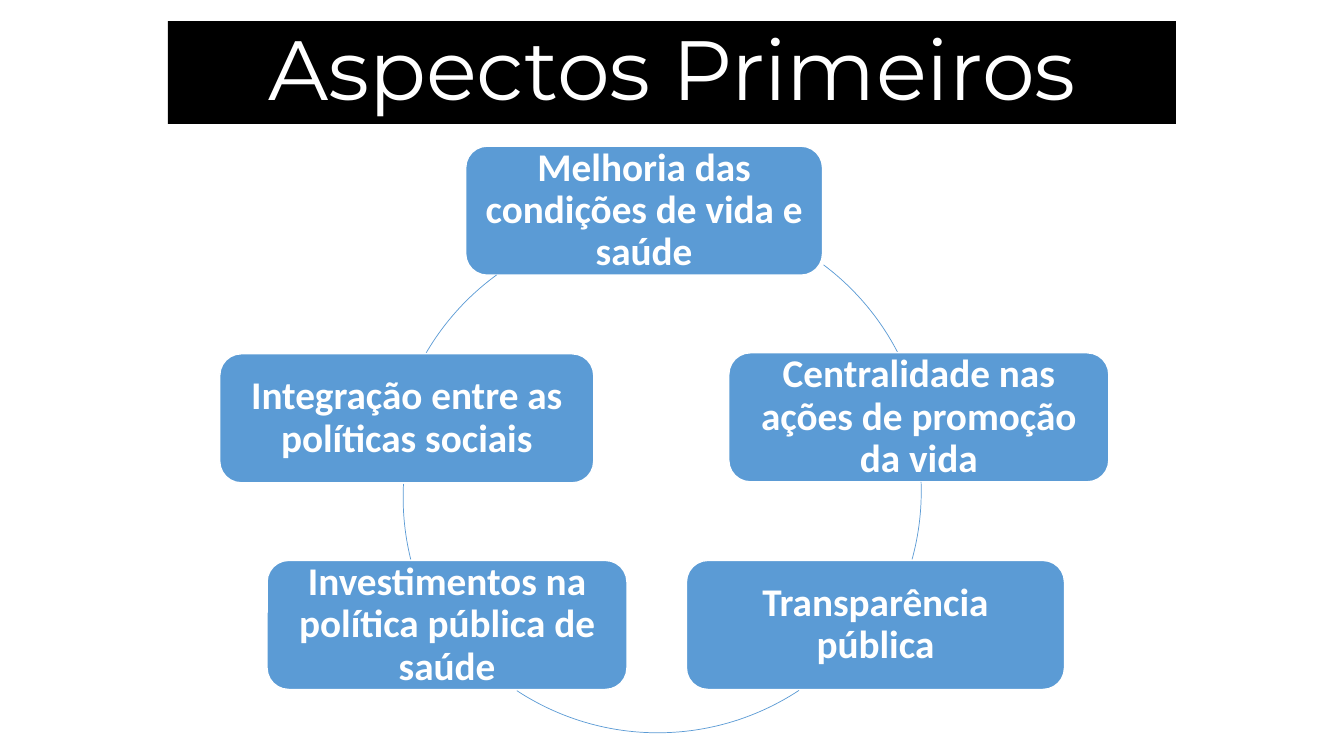
from pptx import Presentation
from pptx.dml.color import RGBColor
from pptx.enum.shapes import MSO_SHAPE
from pptx.enum.text import MSO_ANCHOR, PP_ALIGN
from pptx.util import Inches, Pt

BLACK = RGBColor(0x00, 0x00, 0x00)
WHITE = RGBColor(0xFF, 0xFF, 0xFF)
BLUE = RGBColor(0x5B, 0x9B, 0xD5)

COLS, ROWS = 80, 45
NODE_ROWS = 7.68
RING = 30.54
ANGLE_UNIT = 0.6

TITLE_FONT = {"name": "Montserrat", "size": Pt(60), "bold": False}
NODE_FONT = {"name": "Calibri", "size": Pt(28), "bold": True}

NODES = [
    ("Melhoria das condições de vida e saúde", 27.72, 8.7, 21.24),
    ("Centralidade nas ações de promoção da vida", 43.38, 21, 22.62),
    ("Transparência pública", 40.86, 33.36, 22.5),
    ("Investimentos na política pública de saúde", 15.9, 33.36, 21.42),
    ("Integração entre as políticas sociais", 13.08, 21.06, 22.26),
]
ARCS = [
    (24.6, 12.72, 306.8, 332.6),
    (24.3, 13.98, 357.9, 15.4),
    (23.88, 13.08, 56.6, 123.3),
    (24, 14.34, 166, 183.05),
    (23.28, 13.44, 210.35, 233.96),
]


class Deck:
    def __init__(self):
        self.prs = Presentation()
        self.prs.slide_width = Inches(13.33)
        self.prs.slide_height = Inches(7.5)
        self.s = self.prs.slides.add_slide(self.prs.slide_layouts[6])

    def shape(self, kind, col, row, cols, rows, fill=None, line=None, width=1):
        dx, dy = self.prs.slide_width / COLS, self.prs.slide_height / ROWS
        box = (round(n) for n in (col * dx, row * dy, cols * dx, rows * dy))
        sp = self.s.shapes.add_shape(kind, *box)
        sp.shadow.inherit = False
        for target, color in ((sp.fill, fill), (sp.line.fill, line)):
            if color is None:
                target.background()
            else:
                target.solid()
                target.fore_color.rgb = color
        if line is not None:
            sp.line.width = Pt(width)
        return sp

    def text(self, sp, text, font, frame):
        tf = sp.text_frame
        for name, value in {"word_wrap": True, **frame}.items():
            setattr(tf, name, value)
        p = tf.paragraphs[0]
        p.alignment = PP_ALIGN.CENTER
        p.line_spacing = 0.9
        r = p.add_run()
        r.text = text
        for name, value in font.items():
            setattr(r.font, name, value)
        r.font.color.rgb = WHITE

    def title(self, text):
        sp = self.shape(MSO_SHAPE.RECTANGLE, 10, 1.26, 60, 6.12, BLACK)
        self.text(sp, text, TITLE_FONT, {"vertical_anchor": MSO_ANCHOR.BOTTOM})

    def node(self, text, col, row, cols):
        sp = self.shape(MSO_SHAPE.ROUNDED_RECTANGLE, col, row, cols, NODE_ROWS, BLUE, WHITE)
        sides = ("left", "top", "right", "bottom")
        frame = {f"margin_{side}": Inches(0.12) for side in sides}
        self.text(sp, text, NODE_FONT, {**frame, "vertical_anchor": MSO_ANCHOR.MIDDLE})

    def arc(self, col, row, start, end):
        sp = self.shape(MSO_SHAPE.ARC, col, row, RING, RING, line=BLUE, width=0.5)
        for i, angle in enumerate((start, end)):
            sp.adjustments[i] = angle * ANGLE_UNIT


def main():
    deck = Deck()
    deck.title("Aspectos Primeiros")
    for node, arc in zip(NODES, ARCS):
        deck.node(*node)
        deck.arc(*arc)
    deck.prs.save("out.pptx")


if __name__ == "__main__":
    main()
